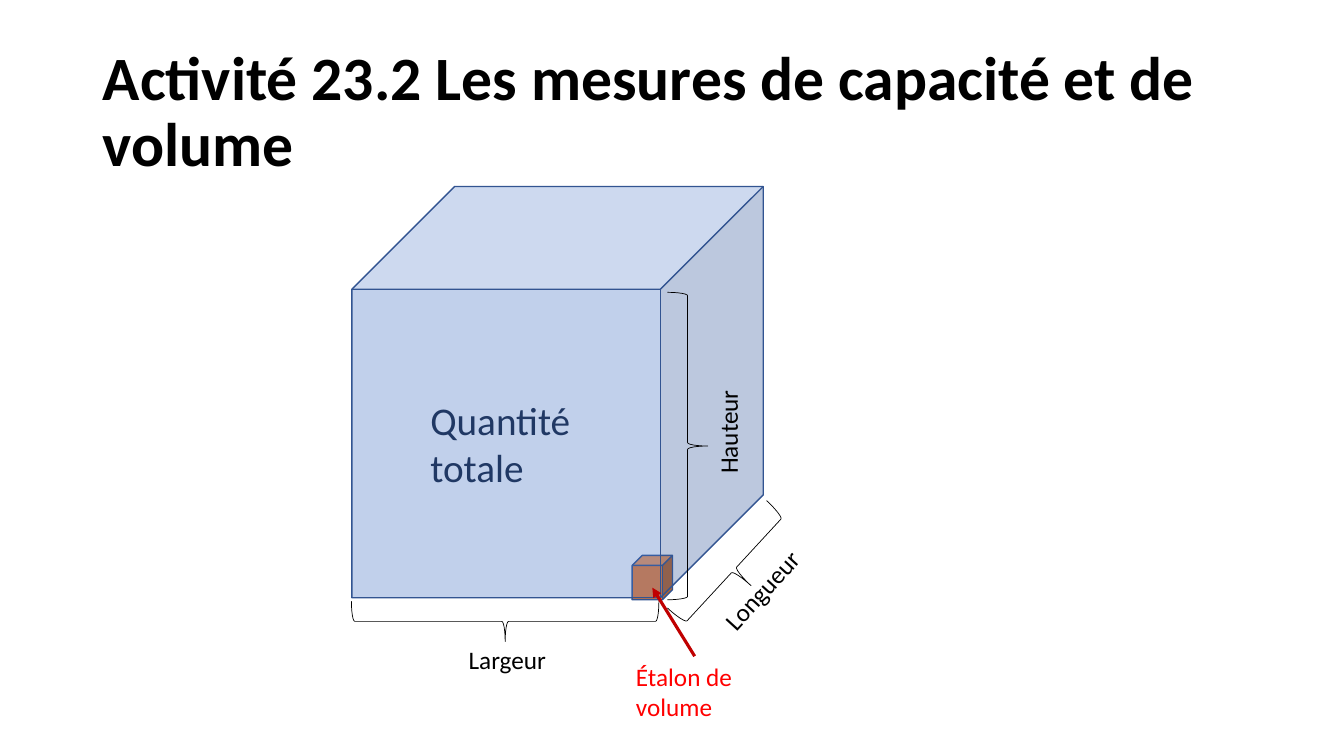
from dataclasses import dataclass

from lxml import etree
from pptx import Presentation
from pptx import util as u
from pptx.dml.color import RGBColor
from pptx.enum import shapes, text
from pptx.oxml.ns import qn


@dataclass(frozen=True)
class Theme:
    font: str = "Calibri"
    ink: str = "000000"
    total: str = "4472C4"
    unit: str = "ED7D31"
    edge: str = "325491"
    total_text: str = "203864"
    unit_text: str = "FF0000"
    arrow: str = "C00000"
    title_size: int = 44
    total_size: int = 28
    label_size: int = 18


class VolumeSlide:
    """Draws the elements of the volume diagram in one theme."""

    def __init__(self, deck, theme):
        self.theme = theme
        self.page = deck.slides.add_slide(deck.slide_layouts[5])

    def add_words(self, frame, words, size, color, **font_format):
        frame.word_wrap = True
        para = frame.paragraphs[0]
        para.alignment = text.PP_ALIGN.LEFT
        span = para.add_run()
        span.text = words
        values = {"name": self.theme.font, "size": u.Pt(size), **font_format}
        for name, value in values.items():
            setattr(span.font, name, value)
        span.font.color.rgb = RGBColor.from_string(color)
        return para

    def title(self, words, place):
        box = self.page.shapes.title
        for name, value in zip(("left", "top", "width", "height"), place):
            setattr(box, name, u.Inches(value))
        box.text_frame.vertical_anchor = text.MSO_ANCHOR.MIDDLE
        para = self.add_words(
            box.text_frame, words, self.theme.title_size, self.theme.ink, bold=True)
        para.line_spacing = 0.9

    def label(self, words, place, size=None, color=None, rotation=0):
        box = self.page.shapes.add_textbox(*map(u.Inches, place))
        box.rotation = rotation
        self.add_words(
            box.text_frame, words, size or self.theme.label_size, color or self.theme.ink)

    def outline(self, line, color, width):
        line.color.rgb = RGBColor.from_string(color)
        line.width = u.Pt(width)

    def cube(self, place, color, opacity=100):
        cube = self.page.shapes.add_shape(shapes.MSO_SHAPE.CUBE, *map(u.Inches, place))
        cube.shadow.inherit = False
        cube.fill.solid()
        cube.fill.fore_color.rgb = RGBColor.from_string(color)
        if opacity < 100:
            tint = cube._element.spPr.find(f"{qn('a:solidFill')}/{qn('a:srgbClr')}")
            etree.SubElement(tint, qn("a:alpha"), val=str(opacity * 1000))
        self.outline(cube.line, self.theme.edge, 1)

    def brace(self, place, rotation=0):
        brace = self.page.shapes.add_shape(shapes.MSO_SHAPE.RIGHT_BRACE, *map(u.Inches, place))
        brace.shadow.inherit = False
        brace.rotation = rotation
        brace.fill.background()
        self.outline(brace.line, self.theme.ink, 0.5)

    def arrow(self, start, end):
        arrow = self.page.shapes.add_connector(
            shapes.MSO_CONNECTOR.STRAIGHT, *map(u.Inches, start + end))
        self.outline(arrow.line, self.theme.arrow, 2.25)
        properties = arrow._element.spPr
        etree.SubElement(properties.find(qn("a:ln")), qn("a:tailEnd"), type="triangle")
        etree.SubElement(properties, qn("a:effectLst"))


def main():
    deck = Presentation()
    deck.slide_width, deck.slide_height = u.Inches(13.33), u.Inches(7.5)
    theme = Theme()
    slide = VolumeSlide(deck, theme)

    slide.title("Activité 23.2 Les mesures de capacité et de volume", (0.92, 0.4, 11.5, 1.45))
    slide.cube((6.27, 5.51, 0.4, 0.44), theme.unit)
    slide.cube((3.49, 1.85, 4.08, 4.08), theme.total, opacity=33)

    dimensions = [
        ("Longueur", (7.05, 4.93, 0.46, 1.45), 42.7, (6.93, 5.55), 312.4),
        ("Hauteur", (6.62, 2.9, 0.4, 3.05), 0, (6.5, 3.88), 270),
        ("Largeur", (4.81, 4.64, 0.4, 3.05), 90, (4.55, 6.34), 0),
    ]
    for name, brace_place, brace_turn, corner, label_turn in dimensions:
        slide.brace(brace_place, brace_turn)
        slide.label(name, corner + (1.44, 0.4), rotation=label_turn)

    slide.label("Étalon de volume", (6.21, 6.51, 1.36, 0.71), color=theme.unit_text)
    slide.arrow((6.89, 6.51), (6.47, 5.83))
    slide.label("Quantité totale", (4.17, 3.88, 1.79, 1.04), theme.total_size, theme.total_text)
    deck.save("out.pptx")


if __name__ == "__main__":
    main()
